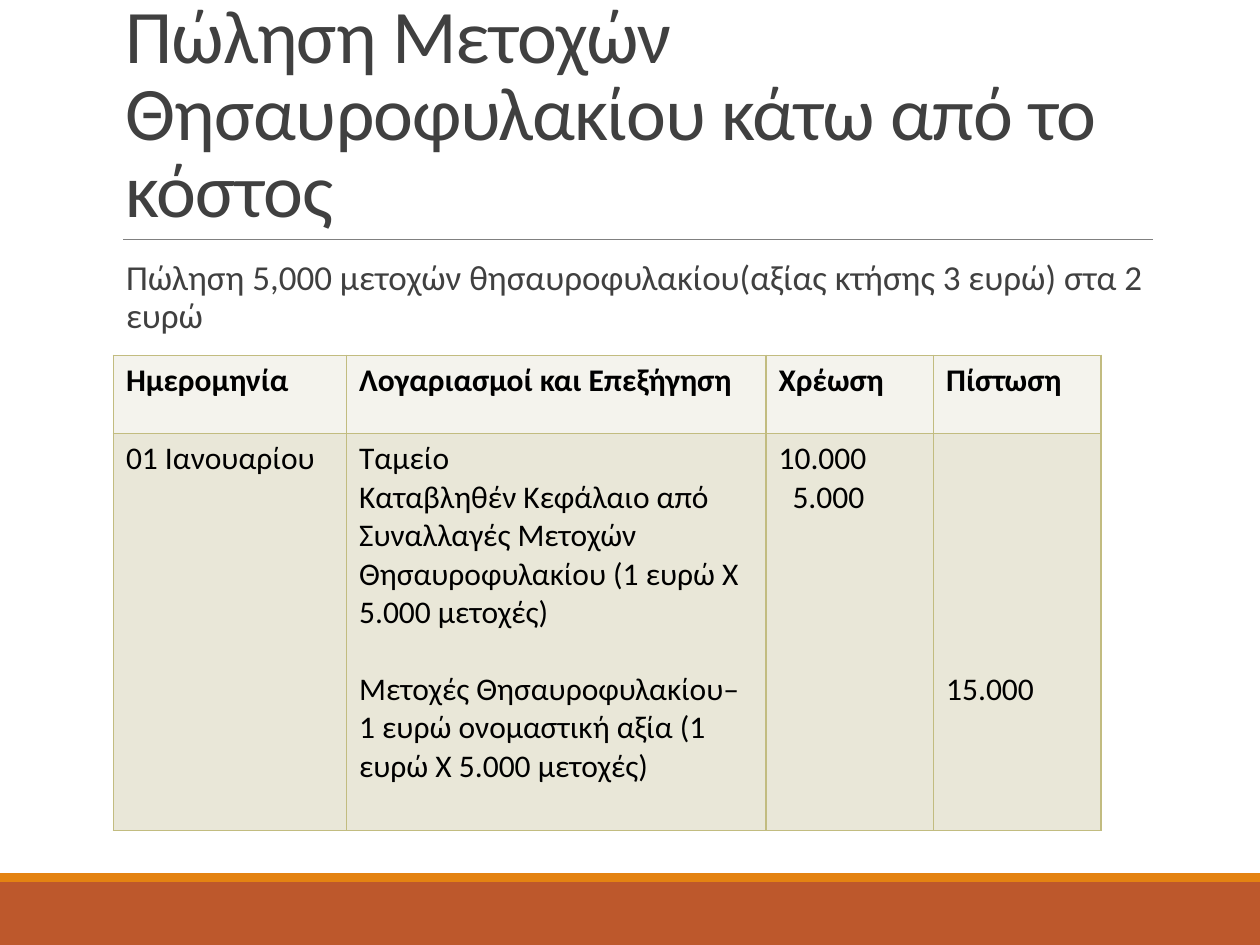
from dataclasses import dataclass

import pptx
import pptx.dml.color
import pptx.enum.shapes
import pptx.enum.text
import pptx.oxml
import pptx.oxml.ns
import pptx.util

Inches = pptx.util.Inches
Pt = pptx.util.Pt

COLORS = {
    "band": "BD582C",
    "stripe": "E48312",
    "rule": "808080",
    "heading": "404040",
    "ink": "000000",
    "header": "F4F3ED",
    "body": "E9E7D8",
    "border": "C2BC80",
}
LINE_HEIGHT = 0.305


@dataclass
class Line:
    text: str
    indent: float = 0
    before: float = 0


@dataclass
class Entry:
    lines: list[Line]
    skipped_lines: int = 0


@dataclass
class Bar:
    top: float
    height: float
    color: str


@dataclass
class Caption:
    text: str
    top: float
    height: float
    side_inset: float
    indent: float
    size: float
    line_spacing: float
    anchor: pptx.enum.text.MSO_ANCHOR
    tracking: int


BARS = [Bar(7, 0.5, "band"), Bar(6.93, 0.07, "stripe")]
CAPTIONS = [
    Caption("Πώληση Μετοχών Θησαυροφυλακίου κάτω από το κόστος", 0.31, 1.59,
            0.1, 0, 43.2, 0.85, pptx.enum.text.MSO_ANCHOR.BOTTOM, -50),
    Caption("Πώληση 5,000 μετοχών θησαυροφυλακίου(αξίας κτήσης 3 ευρώ) στα 2 ευρώ",
            2.02, 0.8, 0, 0.1, 20, 0.9, pptx.enum.text.MSO_ANCHOR.TOP, 0),
]
COLUMN_WIDTHS = [1.85, 3.33, 1.33, 1.33]
ROW_HEIGHTS = [0.62, 3.15]
HEADERS = ["Ημερομηνία", "Λογαριασμοί και Επεξήγηση", "Χρέωση", "Πίστωση"]
JOURNAL = [
    Entry([Line("01 Ιανουαρίου")]),
    Entry([
        Line("Ταμείο"),
        Line("Καταβληθέν Κεφάλαιο από Συναλλαγές Μετοχών Θησαυροφυλακίου "
             "(1 ευρώ Χ 5.000 μετοχές)"),
        Line("Μετοχές Θησαυροφυλακίου– 1 ευρώ ονομαστική αξία "
             "(1 ευρώ Χ 5.000 μετοχές)", before=22),
    ]),
    Entry([Line("10.000"), Line("5.000", indent=0.11)]),
    Entry([Line("15.000")], skipped_lines=6),
]


def rgb(name: str) -> pptx.dml.color.RGBColor:
    return pptx.dml.color.RGBColor.from_string(COLORS[name])


def apply(target, values: dict) -> None:
    for name, value in values.items():
        setattr(target, name, value)


def add_span(para, text: str, size: float, color: str, bold: bool = False):
    span = para.add_run()
    span.text = text
    apply(span.font, {"name": "Calibri", "size": Pt(size), "bold": bold})
    span.font.color.rgb = rgb(color)
    return span


def set_indent(para, inches: float) -> None:
    if inches:
        para._p.get_or_add_pPr().set("marL", str(Inches(inches)))


def draw_bar(page, bar: Bar) -> None:
    box = page.shapes.add_shape(pptx.enum.shapes.MSO_SHAPE.RECTANGLE,
                                0, Inches(bar.top), Inches(10), Inches(bar.height))
    box.shadow.inherit = False
    box.fill.solid()
    box.fill.fore_color.rgb = rgb(bar.color)
    box.line.fill.background()


def draw_rule(page) -> None:
    rule = page.shapes.add_connector(pptx.enum.shapes.MSO_CONNECTOR.STRAIGHT,
                                     Inches(0.98), Inches(1.9), Inches(9.15), Inches(1.9))
    rule.line.color.rgb = rgb("rule")
    rule.line.width = Pt(0.5)
    pptx.oxml.ns.qn("a:effectLst")
    rule._element.spPr.append(pptx.oxml.parse_xml(
        f'<a:effectLst {pptx.oxml.ns.nsdecls("a")}/>'))


def draw_caption(page, caption: Caption) -> None:
    box = page.shapes.add_textbox(Inches(0.9), Inches(caption.top),
                                  Inches(8.25), Inches(caption.height))
    apply(box.text_frame, {
        "word_wrap": True,
        "vertical_anchor": caption.anchor,
        "margin_left": Inches(caption.side_inset),
        "margin_right": Inches(caption.side_inset),
    })
    para = box.text_frame.paragraphs[0]
    para.line_spacing = caption.line_spacing
    set_indent(para, caption.indent)
    span = add_span(para, caption.text, caption.size, "heading")
    if caption.tracking:
        span.font._element.set("spc", str(caption.tracking))


def add_borders(cell) -> None:
    properties = cell._tc.get_or_add_tcPr()
    for side in ("lnL", "lnR", "lnT", "lnB"):
        properties.append(pptx.oxml.parse_xml(
            f'<a:{side} {pptx.oxml.ns.nsdecls("a")} w="{Pt(1)}"><a:solidFill>'
            f'<a:srgbClr val="{COLORS["border"]}"/></a:solidFill></a:{side}>'))


def fill_cell(cell, entry: Entry, color: str, bold: bool) -> None:
    add_borders(cell)
    cell.fill.solid()
    cell.fill.fore_color.rgb = rgb(color)
    cell.margin_top = Inches(0.05 + entry.skipped_lines * LINE_HEIGHT)
    frame = cell.text_frame
    for index, line in enumerate(entry.lines):
        para = frame.add_paragraph() if index else frame.paragraphs[0]
        set_indent(para, line.indent)
        if line.before:
            para.space_before = Pt(line.before)
        add_span(para, line.text, 18, "ink", bold)


def draw_journal(page) -> None:
    table = page.shapes.add_table(
        len(ROW_HEIGHTS), len(COLUMN_WIDTHS), Inches(0.9), Inches(2.82),
        Inches(sum(COLUMN_WIDTHS)), Inches(sum(ROW_HEIGHTS))).table
    table.horz_banding = False
    for column, width in zip(table.columns, COLUMN_WIDTHS):
        column.width = Inches(width)
    for row, height in zip(table.rows, ROW_HEIGHTS):
        row.height = Inches(height)
    for index, (header, entry) in enumerate(zip(HEADERS, JOURNAL)):
        fill_cell(table.cell(0, index), Entry([Line(header)]), "header", True)
        fill_cell(table.cell(1, index), entry, "body", False)


def main() -> None:
    deck = pptx.Presentation()
    apply(deck, {"slide_width": Inches(10), "slide_height": Inches(7.5)})
    page = deck.slides.add_slide(deck.slide_layouts[6])
    for bar in BARS:
        draw_bar(page, bar)
    draw_rule(page)
    for caption in CAPTIONS:
        draw_caption(page, caption)
    draw_journal(page)
    deck.save("out.pptx")


if __name__ == "__main__":
    main()
